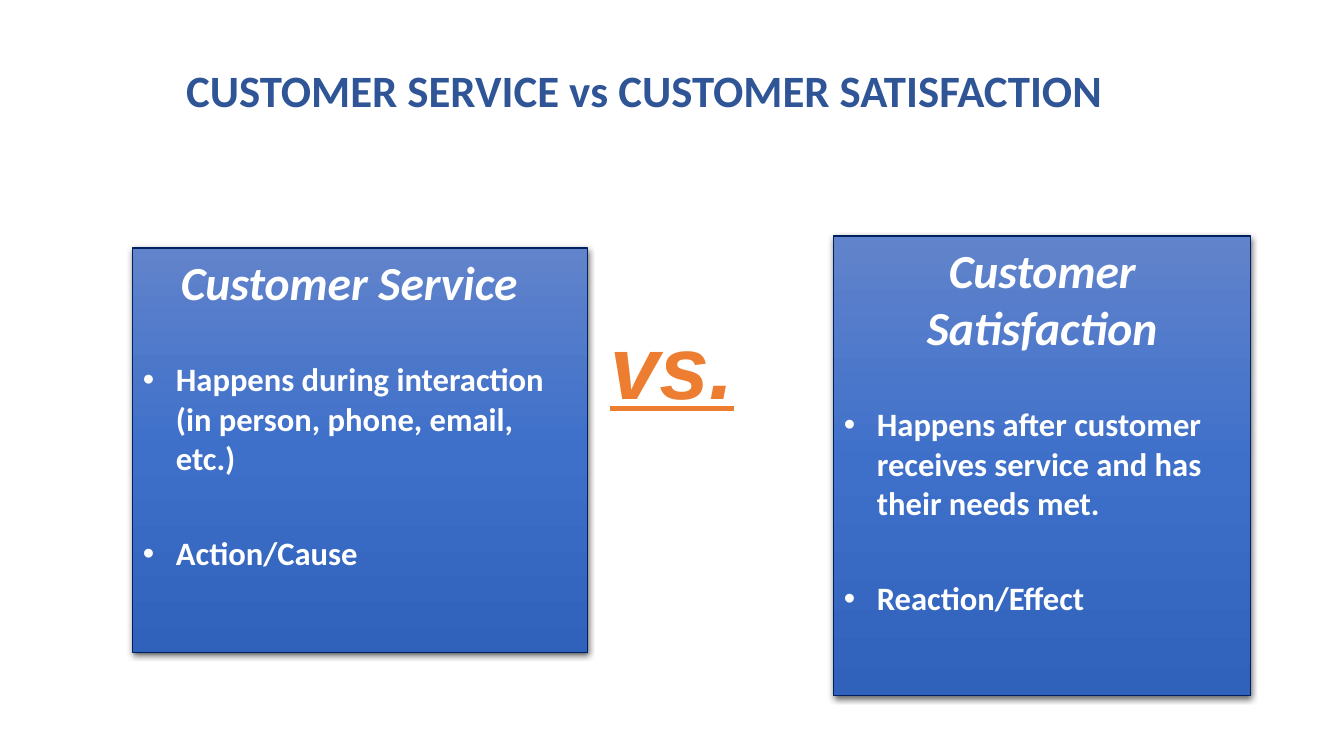
from dataclasses import dataclass

from lxml import etree
from pptx import Presentation
from pptx import util as u
from pptx.dml.color import RGBColor
from pptx.enum import shapes, text
from pptx.oxml.ns import qn

EMU_PER_PX = 914400 / 100.8


@dataclass(frozen=True)
class Theme:
    font: str = "Calibri"
    versus_font: str = "Arial"
    title: str = "2F5597"
    card_text: str = "FFFFFF"
    versus: str = "ED7D31"
    border: str = "002060"
    shadow: str = "000000"
    gradient: tuple = ((0, "6183CB"), (50, "3E70CA"), (100, "3062BB"))
    title_size: float = 32
    heading_size: float = 33.9
    point_size: float = 23.3
    versus_size: float = 63.6


THEME = Theme()

# Heading, bullet points, box (left, top, width, height) and right inset in px
CARDS = (
    ("Customer Service",
     ("Happens during interaction (in person, phone, email, etc.)",
      "Action/Cause"),
     (133, 248, 455, 405), 32),
    ("Customer Satisfaction",
     ("Happens after customer receives service and has their needs met.",
      "Reaction/Effect"),
     (834, 236, 417, 460), 10),
)


def px(length):
    return u.Emu(round(length * EMU_PER_PX))


def add_run(paragraph, wording, size, color, font=THEME.font,
            italic=False, underline=False):
    run = paragraph.add_run()
    run.text = wording
    run.font.name = font
    run.font.size = u.Pt(size)
    run.font.bold = True
    run.font.italic = italic
    run.font.underline = underline
    run.font.color.rgb = RGBColor.from_string(color)


def add_color(parent, color):
    return etree.SubElement(parent, qn("a:srgbClr"), val=color)


def set_gradient(shape):
    shape.fill.gradient()
    shape.fill.gradient_angle = 270
    stops = shape.element.spPr.find(qn("a:gradFill")).find(qn("a:gsLst"))
    for stop in list(stops):
        stops.remove(stop)
    for percent, color in THEME.gradient:
        add_color(etree.SubElement(stops, qn("a:gs"), pos=str(percent * 1000)), color)


def set_shadow(shape):
    shape.shadow.inherit = False
    effects = shape.element.spPr.find(qn("a:effectLst"))
    shadow = etree.SubElement(
        effects, qn("a:outerShdw"), blurRad=str(u.Pt(4.5)), dist=str(u.Pt(1.5)),
        dir="5400000", algn="ctr", rotWithShape="0")
    etree.SubElement(add_color(shadow, THEME.shadow), qn("a:alpha"), val="63000")


def set_bullet(paragraph):
    properties = paragraph._p.get_or_add_pPr()
    properties.set("marL", str(px(33)))
    properties.set("indent", str(-px(33)))
    etree.SubElement(properties, qn("a:buFont"), typeface="Arial")
    etree.SubElement(properties, qn("a:buChar"), char="•")


def place_title(slide, wording):
    title = slide.shapes.title
    title.left, title.top, title.width, title.height = map(px, (176, 53, 991, 80))
    frame = title.text_frame
    frame.word_wrap = True
    frame.vertical_anchor = text.MSO_ANCHOR.MIDDLE
    line = frame.paragraphs[0]
    line.alignment = text.PP_ALIGN.LEFT
    line.line_spacing = 0.9
    add_run(line, wording, THEME.title_size, THEME.title)


def add_card(slide, heading, points, box, right_inset):
    card = slide.shapes.add_shape(shapes.MSO_SHAPE.RECTANGLE, *map(px, box))
    set_gradient(card)
    card.line.color.rgb = RGBColor.from_string(THEME.border)
    card.line.width = u.Pt(0.75)
    set_shadow(card)

    frame = card.text_frame
    frame.word_wrap = True
    frame.vertical_anchor = text.MSO_ANCHOR.TOP
    frame.margin_right = px(right_inset)
    heading_line = frame.paragraphs[0]
    heading_line.alignment = text.PP_ALIGN.CENTER
    heading_line.space_after = u.Pt(35.3)
    add_run(heading_line, heading, THEME.heading_size, THEME.card_text, italic=True)
    for point in points:
        point_line = frame.add_paragraph()
        point_line.alignment = text.PP_ALIGN.LEFT
        point_line.space_after = u.Pt(40.4)
        set_bullet(point_line)
        add_run(point_line, point, THEME.point_size, THEME.card_text)


def add_versus(slide):
    versus = slide.shapes.add_textbox(*map(px, (600, 305, 157, 119)))
    versus.text_frame.word_wrap = True
    line = versus.text_frame.paragraphs[0]
    line.space_after = u.Pt(6)
    add_run(line, "vs.", THEME.versus_size, THEME.versus, THEME.versus_font,
            italic=True, underline=True)


def main():
    deck = Presentation()
    deck.slide_width, deck.slide_height = px(1344), px(756)
    slide = deck.slides.add_slide(deck.slide_layouts[5])

    # Title
    place_title(slide, "CUSTOMER SERVICE vs CUSTOMER SATISFACTION")

    # The two sides of the comparison
    for card in CARDS:
        add_card(slide, *card)

    # Mark between them
    add_versus(slide)
    deck.save("out.pptx")


if __name__ == "__main__":
    main()
